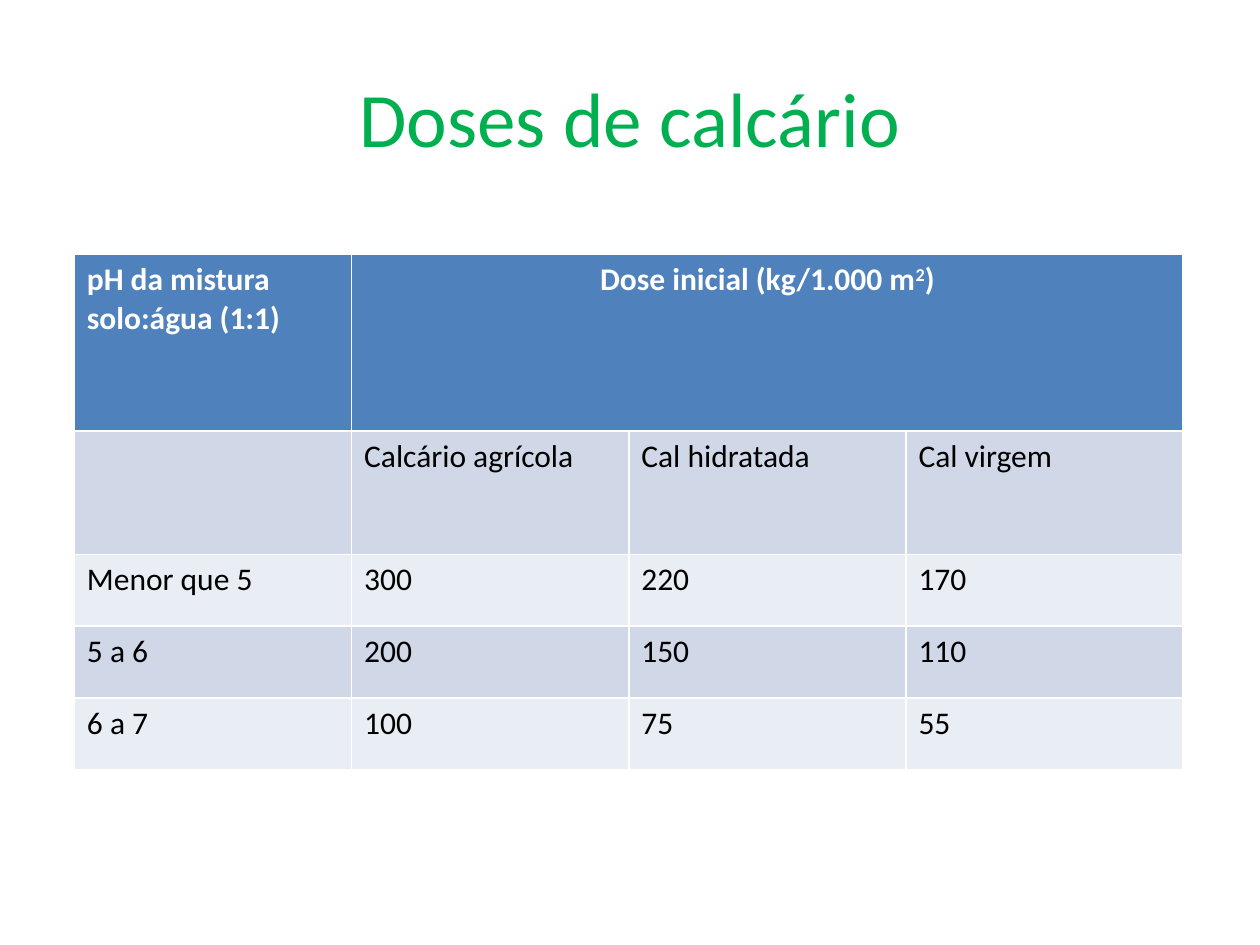
from pptx import Presentation
from pptx.dml.color import RGBColor
from pptx.enum.text import MSO_ANCHOR, PP_ALIGN
from pptx.util import Inches, Pt

GREEN = RGBColor(0x00, 0xB0, 0x50)
BLUE = RGBColor(0x4F, 0x81, 0xBD)
DARK_BAND = RGBColor(0xD0, 0xD8, 0xE8)
LIGHT_BAND = RGBColor(0xE9, 0xED, 0xF4)
WHITE = RGBColor(0xFF, 0xFF, 0xFF)
BLACK = RGBColor(0x00, 0x00, 0x00)

ROW_HEIGHTS = [1.4, 0.98, 0.57, 0.57, 0.57]
COLUMN_WIDTH = 2.2
ROWS = [
    ["pH da mistura solo:água (1:1)", "Dose inicial (kg/1.000 m", "", ""],
    ["", "Calcário agrícola", "Cal hidratada", "Cal virgem"],
    ["Menor que 5", "300", "220", "170"],
    ["5 a 6", "200", "150", "110"],
    ["6 a 7", "100", "75", "55"],
]


def add_run(paragraph, text, size, color, bold=False):
    run = paragraph.add_run()
    run.text = text
    run.font.name = "Calibri"
    run.font.size = Pt(size)
    run.font.bold = bold
    run.font.color.rgb = color
    return run


presentation = Presentation()
presentation.slide_width = Inches(10)
presentation.slide_height = Inches(7.5)
slide = presentation.slides.add_slide(presentation.slide_layouts[6])

# Title
title = slide.shapes.add_textbox(Inches(0.5), Inches(0.3), Inches(9), Inches(1.25))
title.text_frame.word_wrap = True
title.text_frame.vertical_anchor = MSO_ANCHOR.MIDDLE
paragraph = title.text_frame.paragraphs[0]
paragraph.alignment = PP_ALIGN.CENTER
add_run(paragraph, "Doses de calcário", 44, GREEN)

# Dose table: the default table style supplies the white rules
table = slide.shapes.add_table(
    len(ROWS), len(ROWS[0]), Inches(0.59), Inches(2.02),
    Inches(COLUMN_WIDTH * len(ROWS[0])), Inches(sum(ROW_HEIGHTS)),
).table
for column in table.columns:
    column.width = Inches(COLUMN_WIDTH)
for row, height in zip(table.rows, ROW_HEIGHTS):
    row.height = Inches(height)
table.cell(0, 1).merge(table.cell(0, 3))

for row_index, texts in enumerate(ROWS):
    is_header = row_index == 0
    band = DARK_BAND if row_index % 2 else LIGHT_BAND
    for column_index, text in enumerate(texts):
        cell = table.cell(row_index, column_index)
        cell.fill.solid()
        cell.fill.fore_color.rgb = BLUE if is_header else band
        if text:
            add_run(cell.text_frame.paragraphs[0], text, 18,
                    WHITE if is_header else BLACK, is_header)

# Superscript in the merged heading
paragraph = table.cell(0, 1).text_frame.paragraphs[0]
paragraph.alignment = PP_ALIGN.CENTER
exponent = add_run(paragraph, "2", 18, WHITE, True)
exponent.font._element.set("baseline", "30000")
add_run(paragraph, ")", 18, WHITE, True)

presentation.save("out.pptx")
